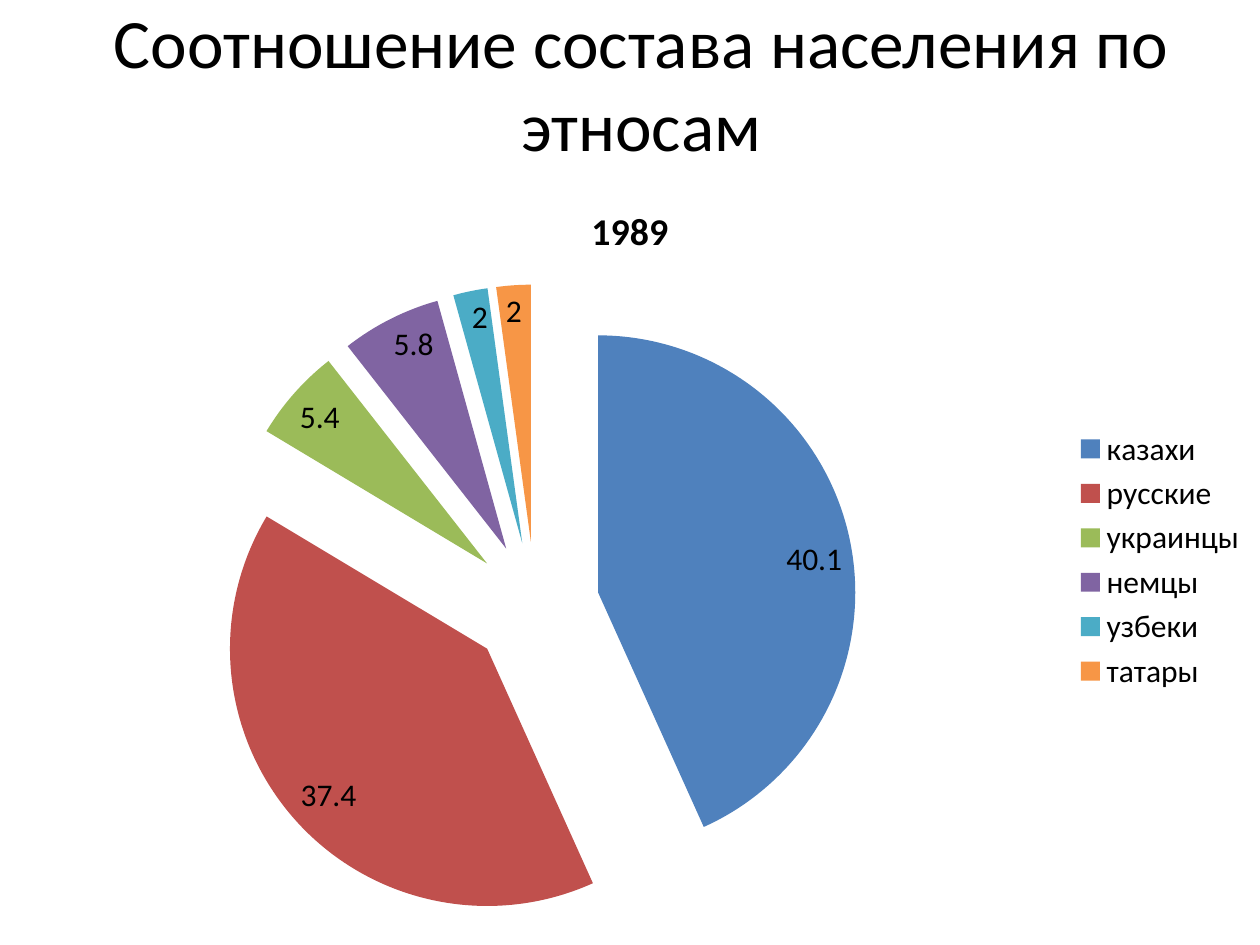
from lxml import etree
from pptx import Presentation
from pptx import util as u
from pptx.chart.data import CategoryChartData
from pptx.dml.color import RGBColor
from pptx.enum import chart as ch
from pptx.enum import text
from pptx.oxml.ns import qn

# Content
TITLE = "Соотношение состава населения по этносам"
YEAR = "1989"
BLACK = RGBColor(0, 0, 0)
SHARES = [
    ("казахи", 40.1, RGBColor(0x4F, 0x81, 0xBD)),
    ("русские", 37.4, RGBColor(0xC0, 0x50, 0x4D)),
    ("украинцы", 5.4, RGBColor(0x9B, 0xBB, 0x59)),
    ("немцы", 5.8, RGBColor(0x80, 0x64, 0xA2)),
    ("узбеки", 2, RGBColor(0x4B, 0xAC, 0xC6)),
    ("татары", 2, RGBColor(0xF7, 0x96, 0x46)),
]
EXPLOSION = 25  # percent of the radius

# Layout in inches
WIDTH, HEIGHT = 10, 7.5
TITLE_BOX = (0.59, 0.03, 9, 1.25)
CHART_TOP = 1.39
CHART_BOX = (0, CHART_TOP, WIDTH, HEIGHT - CHART_TOP)


def set_font(font, size, bold=False):
    formats = {"name": "Calibri", "size": u.Pt(size), "bold": bold}
    for key, value in formats.items():
        setattr(font, key, value)
    font.color.rgb = BLACK


deck = Presentation()
deck.slide_width, deck.slide_height = u.Inches(WIDTH), u.Inches(HEIGHT)
page = deck.slides.add_slide(deck.slide_layouts[5])

# Title
title = page.shapes.title
for side, length in zip(("left", "top", "width", "height"), TITLE_BOX):
    setattr(title, side, u.Inches(length))
frame = title.text_frame
frame.text = TITLE
frame.word_wrap = True
frame.auto_size = text.MSO_AUTO_SIZE.NONE
frame.vertical_anchor = text.MSO_ANCHOR.MIDDLE
para = frame.paragraphs[0]
para.alignment = text.PP_ALIGN.CENTER
set_font(para.runs[0].font, 39.6)

# Pie chart
data = CategoryChartData()
data.categories = [name for name, _, _ in SHARES]
data.add_series(YEAR, [value for _, value, _ in SHARES])
chart = page.shapes.add_chart(
    ch.XL_CHART_TYPE.PIE, *map(u.Inches, CHART_BOX), data).chart
set_font(chart.font, 18)
chart.has_title = True
chart.chart_title.text_frame.text = YEAR
set_font(chart.chart_title.text_frame.paragraphs[0].runs[0].font, 21.6, bold=True)
chart.has_legend = True
chart.legend.position = ch.XL_LEGEND_POSITION.RIGHT
chart.legend.include_in_layout = False

# Separated, coloured slices
pie = chart.plots[0]
pie.vary_by_categories = True
series = pie.series[0]
explosion = etree.Element(qn("c:explosion"), val=str(EXPLOSION))
series._element.find(qn("c:tx")).addnext(explosion)
for index, (_, _, color) in enumerate(SHARES):
    fill = series.points[index].format.fill
    fill.solid()
    fill.fore_color.rgb = color

# Value labels
pie.has_data_labels = True
labels = pie.data_labels
labels.show_value = True
labels.show_percentage = False
labels.position = ch.XL_LABEL_POSITION.INSIDE_END
set_font(labels.font, 18)

deck.save("out.pptx")
